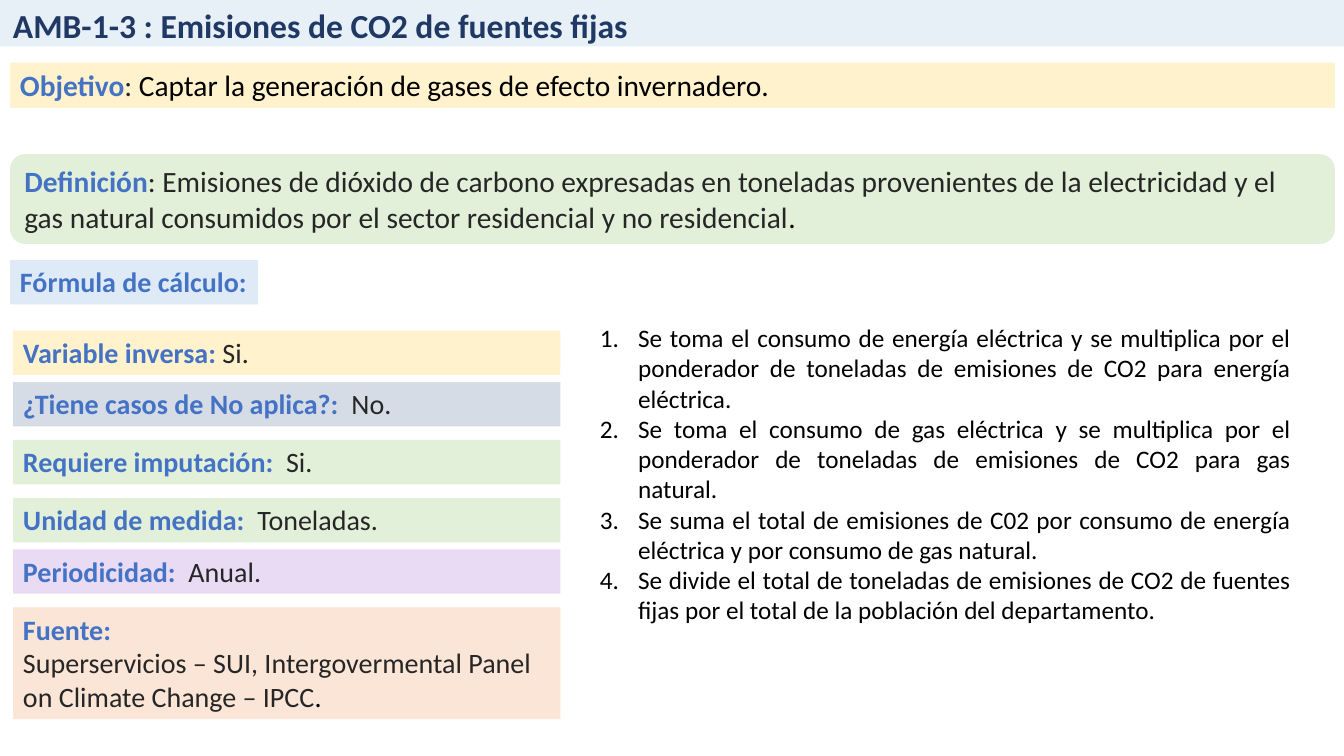
"""Builds the indicator sheet AMB-1-3 on CO2 emissions from fixed sources."""
from dataclasses import dataclass

from lxml import etree
from pptx import Presentation, util as u
from pptx.dml.color import RGBColor
from pptx.enum import shapes, text
from pptx.oxml.ns import qn


@dataclass(frozen=True)
class Theme:
    font: str = "Calibri"
    title_size: int = 24
    lead_size: int = 21
    card_size: int = 20
    step_size: int = 18
    title: str = "203864"
    label: str = "4472C4"
    body: str = "262626"
    black: str = "000000"
    header: str = "E7F0F7"
    yellow: str = "FFF2CC"
    green: str = "E2F0D9"
    blue: str = "DEEBF7"
    grey: str = "D6DCE5"
    purple: str = "EADBF5"
    peach: str = "FBE5D6"


@dataclass(frozen=True)
class Area:
    column: float
    row: float
    columns: float
    rows: float


@dataclass(frozen=True)
class Span:
    words: str
    color: str
    bold: bool = False


@dataclass(frozen=True)
class Panel:
    area: Area
    fill: str
    paragraphs: list[list[Span]]
    size: int
    outline: shapes.MSO_SHAPE = shapes.MSO_SHAPE.RECTANGLE


@dataclass(frozen=True)
class Fact:
    gap: float
    rows: float
    fill: str
    paragraphs: list[list[Span]]


THEME = Theme()
WIDTH, HEIGHT = u.Inches(13.33), u.Inches(7.5)
COLUMNS, ROWS = 133.3, 75
MARGIN, FACT_MARGIN = 1, 1.3
FULL_WIDTH, FACT_WIDTH = 131.4, 54.3
FACTS_TOP, FACT_ROWS = 32.8, 4.4
NARROW, WIDE = 0.7, 1.35


def place(area: Area) -> tuple[int, int, int, int]:
    return (round(WIDTH * area.column / COLUMNS), round(HEIGHT * area.row / ROWS),
            round(WIDTH * area.columns / COLUMNS), round(HEIGHT * area.rows / ROWS))


def write(paragraph, spans: list[Span], size: int) -> None:
    paragraph.font.name = THEME.font
    paragraph.font.size = u.Pt(size)
    for span in spans:
        run = paragraph.add_run()
        run.text = span.words
        run.font.bold = span.bold
        run.font.color.rgb = RGBColor.from_string(span.color)


def draw_panel(slide, panel: Panel) -> None:
    shape = slide.shapes.add_shape(panel.outline, *place(panel.area))
    shape.shadow.inherit = False
    shape.fill.solid()
    shape.fill.fore_color.rgb = RGBColor.from_string(panel.fill)
    shape.line.fill.background()
    frame = shape.text_frame
    frame.word_wrap = True
    frame.vertical_anchor = text.MSO_ANCHOR.TOP
    for index, spans in enumerate(panel.paragraphs):
        paragraph = frame.add_paragraph() if index else frame.paragraphs[0]
        paragraph.alignment = text.PP_ALIGN.LEFT
        write(paragraph, spans, panel.size)


def draw_title(slide, area: Area, words: str) -> None:
    frame = slide.shapes.add_textbox(*place(area)).text_frame
    frame.word_wrap = True
    frame.vertical_anchor = text.MSO_ANCHOR.MIDDLE
    frame.paragraphs[0].line_spacing = 0.9
    write(frame.paragraphs[0], [Span(words, THEME.title, True)], THEME.title_size)


def draw_steps(slide, area: Area, steps: list[str]) -> None:
    frame = slide.shapes.add_textbox(*place(area)).text_frame
    frame.word_wrap = True
    indent = u.Inches(0.38)
    for index, step in enumerate(steps):
        paragraph = frame.add_paragraph() if index else frame.paragraphs[0]
        paragraph.alignment = text.PP_ALIGN.JUSTIFY
        properties = paragraph._p.get_or_add_pPr()
        properties.set("marL", str(indent))
        properties.set("indent", str(-indent))
        etree.SubElement(properties, qn("a:buFont"), typeface="+mj-lt")
        etree.SubElement(properties, qn("a:buAutoNum"), type="arabicPeriod")
        write(paragraph, [Span(step, THEME.black)], THEME.step_size)


def label(words: str) -> Span:
    return Span(words, THEME.label, True)


def body(words: str) -> Span:
    return Span(words, THEME.body)


def black(words: str) -> Span:
    return Span(words, THEME.black)


PANELS = [
    Panel(Area(0, 0, COLUMNS, 4.6), THEME.header, [], THEME.title_size),
    Panel(Area(MARGIN, 6.2, FULL_WIDTH, 4.5), THEME.yellow,
          [[label("Objetivo"), body(":"),
            black(" Captar la generación de gases de efecto invernadero.")]],
          THEME.lead_size),
    Panel(Area(MARGIN, 15.3, FULL_WIDTH, 8.9), THEME.green,
          [[label("Definición"),
            body(": Emisiones de dióxido de carbono expresadas en toneladas provenientes "
                 "de la electricidad y el gas natural consumidos por el sector "
                 "residencial y no residencial"),
            black(".")]],
          THEME.lead_size, shapes.MSO_SHAPE.ROUNDED_RECTANGLE),
    Panel(Area(MARGIN, 25.8, 24.6, FACT_ROWS), THEME.blue,
          [[label("Fórmula de cálculo:")]], THEME.card_size),
]

FACTS = [
    Fact(0, FACT_ROWS, THEME.yellow, [[label("Variable inversa:"), body(" Si.")]]),
    Fact(NARROW, FACT_ROWS, THEME.grey,
         [[label("¿Tiene casos de No aplica?:"), body("  No.")]]),
    Fact(WIDE, FACT_ROWS, THEME.green, [[label("Requiere imputación:"), body("  Si.")]]),
    Fact(WIDE, FACT_ROWS, THEME.green,
         [[label("Unidad de medida:"), body("  Toneladas.")]]),
    Fact(NARROW, FACT_ROWS, THEME.purple, [[label("Periodicidad:"), body("  Anual.")]]),
    Fact(WIDE, 11.1, THEME.peach,
         [[label("Fuente:")],
          [body("Superservicios – SUI, Intergovermental Panel on Climate Change – IPCC"),
           black(".")]]),
]

STEPS = [
    "Se toma el consumo de energía eléctrica y se multiplica por el ponderador de "
    "toneladas de emisiones de CO2 para energía eléctrica.",
    "Se toma el consumo de gas eléctrica y se multiplica por el ponderador de "
    "toneladas de emisiones de CO2 para gas natural.",
    "Se suma el total de emisiones de C02 por consumo de energía eléctrica y por "
    "consumo de gas natural.",
    "Se divide el total de toneladas de emisiones de CO2 de fuentes fijas por el "
    "total de la población del departamento.",
]


def main() -> None:
    deck = Presentation()
    deck.slide_width, deck.slide_height = WIDTH, HEIGHT
    slide = deck.slides.add_slide(deck.slide_layouts[6])
    for panel in PANELS:
        draw_panel(slide, panel)
    draw_title(slide, Area(0.3, 0, 126.2, 5.5), "AMB-1-3 : Emisiones de CO2 de fuentes fijas")
    row = FACTS_TOP
    for fact in FACTS:
        row += fact.gap
        area = Area(FACT_MARGIN, row, FACT_WIDTH, fact.rows)
        draw_panel(slide, Panel(area, fact.fill, fact.paragraphs, THEME.card_size))
        row += fact.rows
    draw_steps(slide, Area(58.5, 31.5, 70.5, 34.3), STEPS)
    deck.save("out.pptx")


if __name__ == "__main__":
    main()
